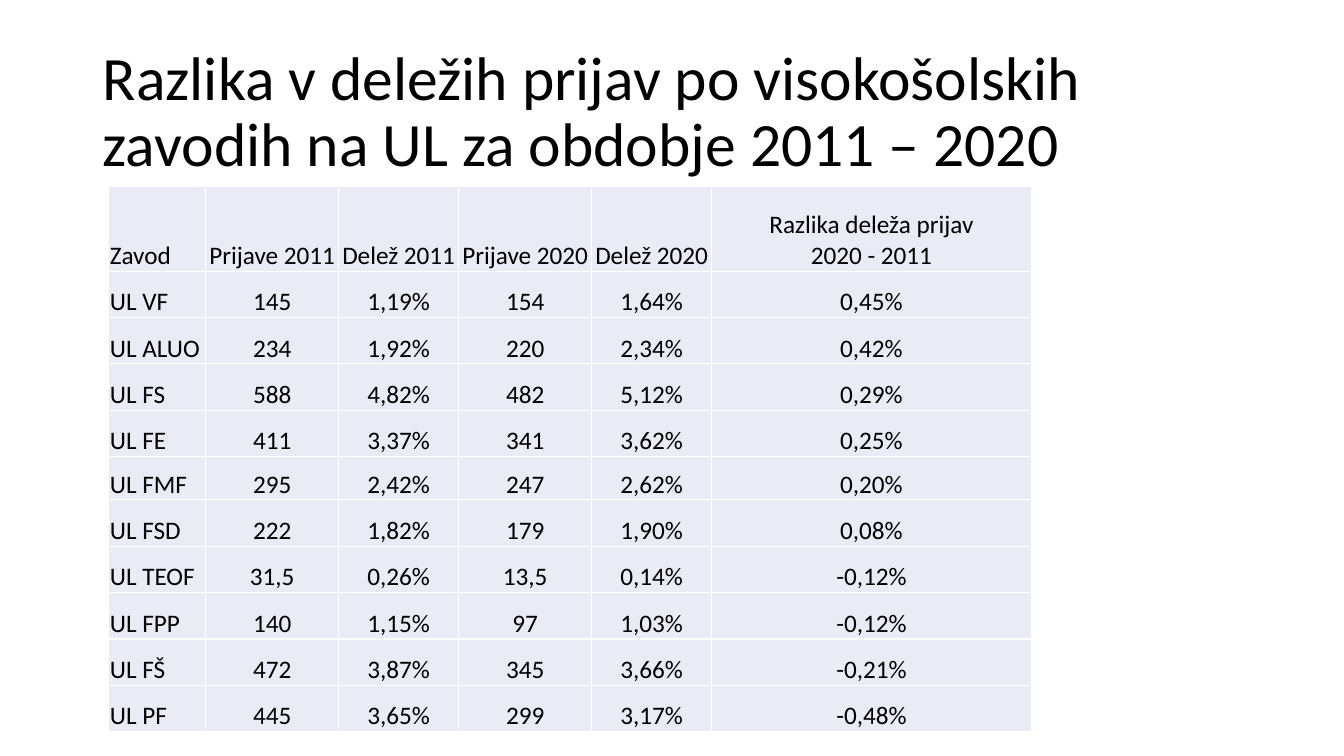
from lxml import etree
from pptx import Presentation
from pptx import util as u
from pptx.dml.color import RGBColor
from pptx.enum import text
from pptx.oxml.ns import qn

WIDE, HIGH = 13.33, 7.5
FONT = "Calibri"
HUES = {"ink": "000000", "cell": "E9EBF5", "rule": "FFFFFF"}
TITLE = "Razlika v deležih prijav po visokošolskih zavodih na UL za obdobje 2011 – 2020"
COLS = [0.96, 1.32, 1.19, 1.32, 1.19, 3.17]
HEAD_ROW, BODY_ROW, LOW_ROW = 0.84, 0.46, 0.43
LOW = "UL FMF"
HEAD = ["Zavod", "Prijave 2011", "Delež 2011", "Prijave 2020", "Delež 2020",
        "Razlika deleža prijav\n2020 - 2011"]
SHARES = [
    ["UL VF", "145", "1,19%", "154", "1,64%", "0,45%"],
    ["UL ALUO", "234", "1,92%", "220", "2,34%", "0,42%"],
    ["UL FS", "588", "4,82%", "482", "5,12%", "0,29%"],
    ["UL FE", "411", "3,37%", "341", "3,62%", "0,25%"],
    ["UL FMF", "295", "2,42%", "247", "2,62%", "0,20%"],
    ["UL FSD", "222", "1,82%", "179", "1,90%", "0,08%"],
    ["UL TEOF", "31,5", "0,26%", "13,5", "0,14%", "-0,12%"],
    ["UL FPP", "140", "1,15%", "97", "1,03%", "-0,12%"],
    ["UL FŠ", "472", "3,87%", "345", "3,66%", "-0,21%"],
    ["UL PF", "445", "3,65%", "299", "3,17%", "-0,48%"],
]


def style(par, size, align):
    par.font.name = FONT
    par.font.size = u.Pt(size)
    par.font.color.rgb = RGBColor.from_string(HUES["ink"])
    par.alignment = align


def add_title(slide, words):
    box = slide.shapes.add_textbox(u.Inches(0.92), u.Inches(0.4),
                                   u.Inches(11.5), u.Inches(1.45))
    frame = box.text_frame
    frame.word_wrap = True
    frame.vertical_anchor = text.MSO_ANCHOR.MIDDLE
    frame.text = words
    par = frame.paragraphs[0]
    style(par, 44, text.PP_ALIGN.LEFT)
    par.line_spacing = 0.9


def add_rules(cell):
    """Draw a thin line on all four sides of a cell."""
    props = cell._tc.get_or_add_tcPr()
    for side in ("lnL", "lnR", "lnT", "lnB"):
        line = etree.SubElement(props, qn("a:" + side), w=str(u.Pt(1)))
        fill = etree.SubElement(line, qn("a:solidFill"))
        etree.SubElement(fill, qn("a:srgbClr"), val=HUES["rule"])


def fill_cell(cell, words, align):
    cell.text = words
    cell.vertical_anchor = text.MSO_ANCHOR.BOTTOM
    cell.margin_left = cell.margin_right = cell.margin_top = u.Inches(0.01)
    cell.margin_bottom = 0
    for par in cell.text_frame.paragraphs:
        style(par, 18, align)
    add_rules(cell)
    cell.fill.solid()
    cell.fill.fore_color.rgb = RGBColor.from_string(HUES["cell"])


def add_grid(slide, head, body):
    rows = [head] + body
    highs = [HEAD_ROW] + [LOW_ROW if row[0] == LOW else BODY_ROW for row in body]
    grid = slide.shapes.add_table(
        len(rows), len(COLS), u.Inches(1.08), u.Inches(1.85),
        u.Inches(sum(COLS)), u.Inches(sum(highs))).table
    grid.first_row = grid.horz_banding = False
    for col, wide in zip(grid.columns, COLS):
        col.width = u.Inches(wide)
    for r, (row, high) in enumerate(zip(rows, highs)):
        grid.rows[r].height = u.Inches(high)
        for c, words in enumerate(row):
            align = text.PP_ALIGN.CENTER if c else text.PP_ALIGN.LEFT
            fill_cell(grid.cell(r, c), words, align)


def main():
    deck = Presentation()
    deck.slide_width, deck.slide_height = u.Inches(WIDE), u.Inches(HIGH)
    slide = deck.slides.add_slide(deck.slide_layouts[6])
    add_title(slide, TITLE)
    add_grid(slide, HEAD, SHARES)
    deck.save("out.pptx")


if __name__ == "__main__":
    main()
